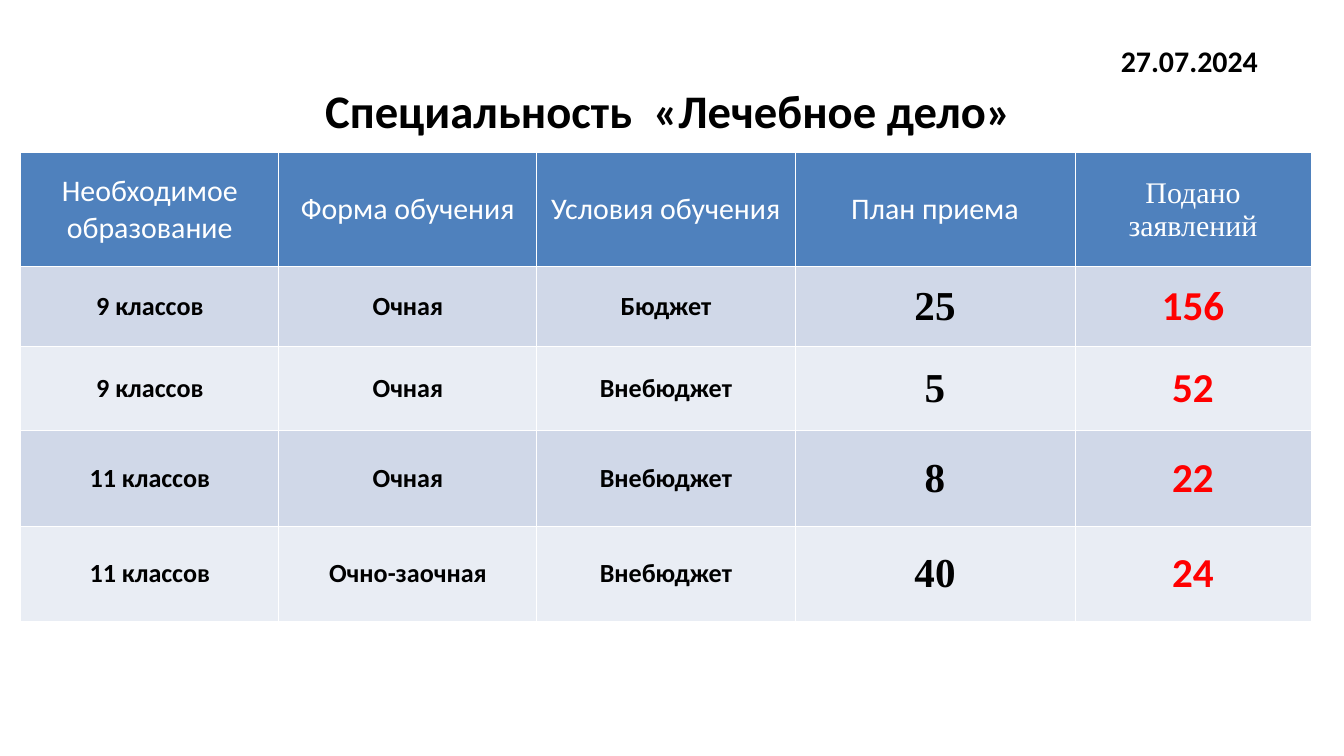
"""Build the admissions slide for one speciality: date, title and a table."""
from lxml import etree
from pptx import Presentation
from pptx import util as u
from pptx.dml.color import RGBColor
from pptx.enum import text
from pptx.oxml import ns

W, H = 20, 11.25
BLACK = RGBColor(0x00, 0x00, 0x00)
WHITE = RGBColor(0xFF, 0xFF, 0xFF)
RED = RGBColor(0xFF, 0x00, 0x00)
BLUE = RGBColor(0x4F, 0x81, 0xBD)
BANDS = RGBColor(0xD0, 0xD8, 0xE8), RGBColor(0xE9, 0xED, 0xF4)
SANS, SERIF = "Calibri", "Times New Roman"

COLS = [3.84, 3.84, 3.84, 4.17, 3.51]
ROWS = [1.7, 1.19, 1.25, 1.42, 1.42]
HEADER = ["Необходимое образование", "Форма обучения", "Условия обучения",
          "План приема", "Подано заявлений"]
DATA = [
    ["9 классов", "Очная", "Бюджет", "25", "156"],
    ["9 классов", "Очная", "Внебюджет", "5", "52"],
    ["11 классов", "Очная", "Внебюджет", "8", "22"],
    ["11 классов", "Очно-заочная", "Внебюджет", "40", "24"],
]


def font(size, color=BLACK, bold=True, name=SANS):
    return {"size": u.Pt(size), "bold": bold, "name": name, "color": color}


HEAD_FONTS = [font(32, WHITE, False)] * 4 + [font(32, WHITE, False, SERIF)]
BODY_FONTS = [font(28)] * 3 + [font(44, name=SERIF), font(44, RED)]


def write(tf, value, fmt, align=text.PP_ALIGN.CENTER):
    p = tf.paragraphs[0]
    p.alignment = align
    r = p.add_run()
    r.text = value
    for key, val in fmt.items():
        if key == "color":
            r.font.color.rgb = val
        else:
            setattr(r.font, key, val)


def add_text(s, value, top, height, fmt, align):
    box = (W * 0.05, H * top, W * 0.895, H * height)
    tf = s.shapes.add_textbox(*map(u.Inches, box)).text_frame
    tf.word_wrap = True
    tf.vertical_anchor = text.MSO_ANCHOR.MIDDLE
    tf.margin_left = tf.margin_right = u.Inches(0.18)
    write(tf, value, fmt, align)


def set_borders(cell, color, width):
    tc_pr = cell._tc.get_or_add_tcPr()
    for side in ("a:lnL", "a:lnR", "a:lnT", "a:lnB"):
        ln = etree.SubElement(tc_pr, ns.qn(side), w=str(u.Pt(width)))
        fill = etree.SubElement(ln, ns.qn("a:solidFill"))
        etree.SubElement(fill, ns.qn("a:srgbClr"), val=str(color))


def fill_cell(cell, value, fill, fmt):
    layout = {"margin_left": u.Inches(0.15), "margin_right": u.Inches(0.15),
              "margin_top": 0, "margin_bottom": 0,
              "vertical_anchor": text.MSO_ANCHOR.MIDDLE}
    for key, val in layout.items():
        setattr(cell, key, val)
    set_borders(cell, WHITE, 1)
    cell.fill.solid()
    cell.fill.fore_color.rgb = fill
    write(cell.text_frame, value, fmt)


def add_admissions(s):
    box = (0.31, 2.27, sum(COLS), sum(ROWS))
    table = s.shapes.add_table(len(ROWS), len(COLS), *map(u.Inches, box)).table
    for col, width in zip(table.columns, COLS):
        col.width = u.Inches(width)
    for row, height in zip(table.rows, ROWS):
        row.height = u.Inches(height)
    for i, values in enumerate([HEADER] + DATA):
        fill = BANDS[(i - 1) % 2] if i else BLUE
        fonts = BODY_FONTS if i else HEAD_FONTS
        for j, (value, fmt) in enumerate(zip(values, fonts)):
            fill_cell(table.cell(i, j), value, fill, fmt)


def main():
    prs = Presentation()
    prs.slide_width, prs.slide_height = u.Inches(W), u.Inches(H)
    s = prs.slides.add_slide(prs.slide_layouts[6])
    add_text(s, "27.07.2024", 0.05, 0.06, font(32), text.PP_ALIGN.RIGHT)
    add_text(s, "Специальность  «Лечебное дело»", 0.1, 0.09, font(50),
             text.PP_ALIGN.CENTER)
    add_admissions(s)
    prs.save("out.pptx")


if __name__ == "__main__":
    main()
